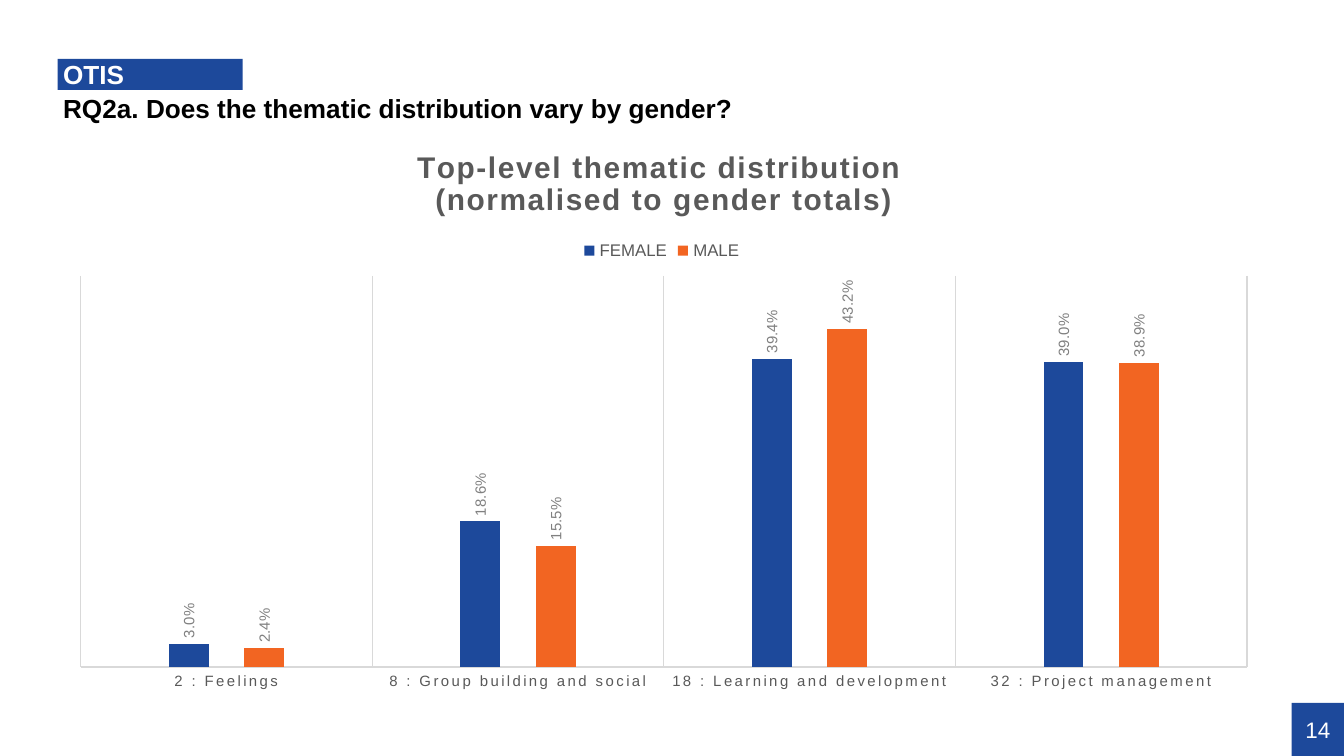
from dataclasses import dataclass

from lxml.etree import SubElement
from pptx import Presentation
from pptx.chart.data import CategoryChartData
from pptx.dml.color import RGBColor
from pptx.enum.chart import XL_CHART_TYPE as ChartType, XL_LABEL_POSITION as LabelPosition
from pptx.enum.chart import XL_LEGEND_POSITION as LegendPosition, XL_TICK_MARK as TickMark
from pptx.enum.shapes import MSO_SHAPE as ShapeKind
from pptx.enum.text import MSO_ANCHOR as Anchor, MSO_AUTO_SIZE as AutoSize, PP_ALIGN as Align
from pptx.oxml.ns import qn
from pptx.util import Pt

BLUE = RGBColor(0x1D, 0x49, 0x9B)
ORANGE = RGBColor(0xF2, 0x65, 0x22)
WHITE = RGBColor(0xFF, 0xFF, 0xFF)
BLACK = RGBColor(0, 0, 0)
DARK_GREY = RGBColor(0x59, 0x59, 0x59)
MID_GREY = RGBColor(0x80, 0x80, 0x80)
LIGHT_GREY = RGBColor(0xD9, 0xD9, 0xD9)
FONT = "Arial"


@dataclass(frozen=True)
class Box:
    left: float
    top: float
    width: float
    height: float


@dataclass(frozen=True)
class GenderSeries:
    name: str
    values: tuple[float, ...]
    color: RGBColor


CATEGORIES = ("2 : Feelings", "8 : Group building and social",
              "18 : Learning and development", "32 : Project management")
SERIES = (
    GenderSeries("FEMALE", (0.03, 0.186, 0.394, 0.39), BLUE),
    GenderSeries("MALE", (0.024, 0.155, 0.432, 0.389), ORANGE),
)
TITLE_LINES = ("Top-level thematic distribution ", "(normalised to gender totals)")


def style_font(font, size: float, color: RGBColor, bold: bool = False) -> None:
    font.name, font.size, font.bold = FONT, Pt(size), bold
    font.color.rgb = color


def place(shape, box: Box) -> None:
    shape.left, shape.top = Pt(box.left), Pt(box.top)
    shape.width, shape.height = Pt(box.width), Pt(box.height)


def write(shape, text: str, size: float, color: RGBColor, bold: bool = False,
          align: Align = Align.LEFT, inset: tuple[float, float] = (0, 0)):
    frame = shape.text_frame
    frame.word_wrap, frame.auto_size = True, AutoSize.NONE
    frame.vertical_anchor = Anchor.MIDDLE
    frame.margin_left, frame.margin_top = Pt(inset[0]), Pt(inset[1])
    frame.margin_right = frame.margin_bottom = 0
    paragraph = frame.paragraphs[0]
    paragraph.alignment = align
    run = paragraph.add_run()
    run.text = text
    style_font(run.font, size, color, bold)
    return paragraph


def write_heading(shape, box: Box, text: str, color: RGBColor) -> None:
    place(shape, box)
    paragraph = write(shape, text, 14, color, bold=True, inset=(3, 1.5))
    properties = paragraph._p.get_or_add_pPr()
    properties.set("marL", "0")
    properties.set("indent", "0")
    SubElement(properties, qn("a:buNone"))
    paragraph.line_spacing = 0.9
    paragraph.space_before = Pt(0)


def set_layout(parent, index: int, inner: bool = False, **fractions: float) -> None:
    """Position a chart part by fractions of the chart area."""
    for old in parent.findall(qn("c:layout")):
        parent.remove(old)
    layout = SubElement(parent, qn("c:layout"))
    parent.insert(index, layout)
    manual = SubElement(layout, qn("c:manualLayout"))
    if inner:
        SubElement(manual, qn("c:layoutTarget")).set("val", "inner")
    for mode in ("xMode", "yMode"):
        SubElement(manual, qn(f"c:{mode}")).set("val", "edge")
    for key, value in fractions.items():
        SubElement(manual, qn(f"c:{key}")).set("val", str(value))


def set_tracking(font, hundredths: int) -> None:
    font._element.set("spc", str(hundredths))


def style_line(line) -> None:
    line.color.rgb = LIGHT_GREY
    line.width = Pt(0.75)


def add_theme_chart(slide, box: Box) -> None:
    data = CategoryChartData(number_format="0.0%")
    data.categories = CATEGORIES
    for item in SERIES:
        data.add_series(item.name, item.values)
    chart = slide.shapes.add_chart(ChartType.COLUMN_CLUSTERED, Pt(box.left), Pt(box.top),
                                   Pt(box.width), Pt(box.height), data).chart
    style_font(chart.font, 10, BLACK)

    # Title
    chart.has_title = True
    frame = chart.chart_title.text_frame
    for index, line in enumerate(TITLE_LINES):
        paragraph = frame.add_paragraph() if index else frame.paragraphs[0]
        run = paragraph.add_run()
        run.text = line
        style_font(run.font, 16, DARK_GREY, bold=True)
        set_tracking(run.font, 100)

    # Legend
    chart.has_legend = True
    legend = chart.legend
    legend.position = LegendPosition.TOP
    legend.include_in_layout = False
    style_font(legend.font, 9, DARK_GREY)
    set_layout(legend._element, 1, x=0.43, y=0.19)

    # Axes
    axis = chart.category_axis
    axis.major_tick_mark = axis.minor_tick_mark = TickMark.NONE
    axis.has_major_gridlines = True
    style_line(axis.major_gridlines.format.line)
    style_line(axis.format.line)
    style_font(axis.tick_labels.font, 8, DARK_GREY)
    set_tracking(axis.tick_labels.font, 120)
    values = chart.value_axis
    values.minimum_scale, values.maximum_scale = 0, 0.5
    values.has_major_gridlines = False
    values.tick_labels.number_format = "0.0%"
    values.tick_labels.number_format_is_linked = False
    values.visible = False

    # Columns and their upright labels
    plot = chart.plots[0]
    plot.gap_width, plot.overlap, plot.vary_by_categories = 444, -90, False
    set_layout(chart._chartSpace.chart.plotArea, 0, inner=True, x=0.02, y=0.26, w=0.96, h=0.68)
    for series, item in zip(plot.series, SERIES):
        series.format.fill.solid()
        series.format.fill.fore_color.rgb = item.color
        labels = series.data_labels
        labels.show_value = True
        labels.position = LabelPosition.OUTSIDE_END
        labels.number_format, labels.number_format_is_linked = "0.0%", False
        style_font(labels.font, 8, MID_GREY)
        body = labels._element.find(f"{qn('c:txPr')}/{qn('a:bodyPr')}")
        body.set("rot", "-5400000")
        body.set("vert", "horz")


def main() -> None:
    presentation = Presentation()
    presentation.slide_width, presentation.slide_height = Pt(720), Pt(405)
    slide = presentation.slides.add_slide(presentation.slide_layouts[1])

    # Page number
    number = slide.shapes.add_shape(ShapeKind.RECTANGLE, Pt(692), Pt(376.6), Pt(28), Pt(28.4))
    number.shadow.inherit = False
    number.fill.solid()
    number.fill.fore_color.rgb = BLUE
    number.line.fill.background()
    write(number, "14", 12, WHITE, align=Align.CENTER)

    # Headings
    title, question = slide.shapes.title, slide.placeholders[1]
    title.fill.solid()
    title.fill.fore_color.rgb = BLUE
    write_heading(title, Box(30.8, 31.6, 99.2, 16.6), "OTIS", WHITE)
    write_heading(question, Box(30.8, 48.2, 625.7, 20.2),
                  "RQ2a. Does the thematic distribution vary by gender?", BLACK)

    add_theme_chart(slide, Box(30.2, 67.7, 650.9, 308.2))
    presentation.save("out.pptx")


if __name__ == "__main__":
    main()
